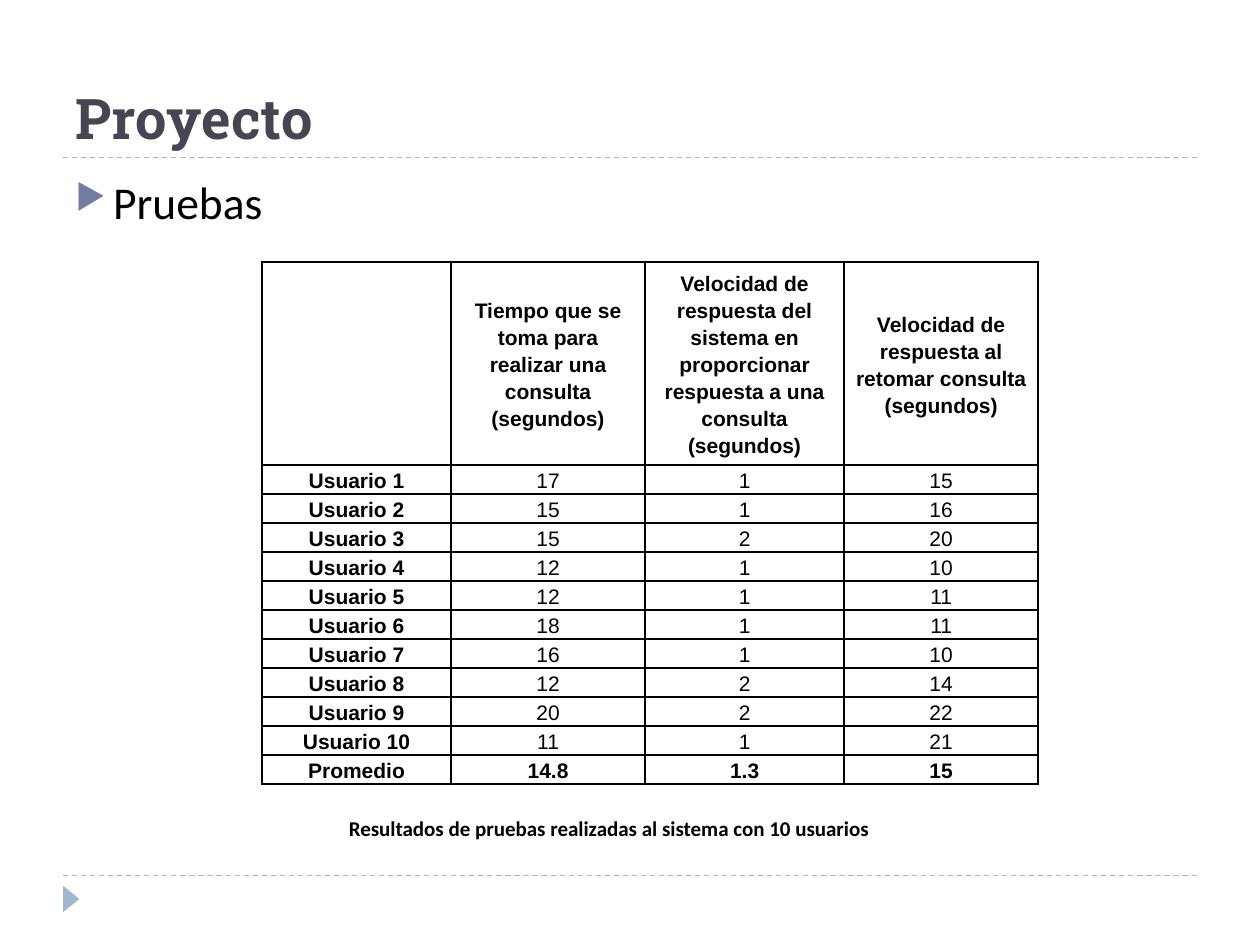
from lxml.etree import SubElement
from pptx import Presentation
from pptx.dml.color import RGBColor
from pptx.enum.dml import MSO_LINE
from pptx.enum.shapes import MSO_CONNECTOR, MSO_SHAPE
from pptx.enum.text import MSO_ANCHOR as ANCHOR, PP_ALIGN as ALIGN
from pptx.oxml.ns import qn
from pptx.util import Inches, Pt

COLORS = {"title": "464653", "text": "000000", "rule": "9FB8CD", "bullet": "727CA3"}
TITLE = "Proyecto"
TOPIC = "Pruebas"
CAPTION = "Resultados de pruebas realizadas al sistema con 10 usuarios"
HEADERS = [
    "",
    "Tiempo que se toma para realizar una consulta (segundos)",
    "Velocidad de respuesta del sistema en proporcionar respuesta a una consulta (segundos)",
    "Velocidad de respuesta al retomar consulta (segundos)",
]
TIMES = [
    (17, 1, 15), (15, 1, 16), (15, 2, 20), (12, 1, 10), (12, 1, 11),
    (18, 1, 11), (16, 1, 10), (12, 2, 14), (20, 2, 22), (11, 1, 21),
]
AVERAGES = ["Promedio", "14.8", "1.3", "15"]
ROWS = [
    HEADERS,
    *([f"Usuario {number}", *map(str, times)] for number, times in enumerate(TIMES, 1)),
    AVERAGES,
]

WIDTH, HEIGHT = 10, 7.5
MARGIN = WIDTH * 0.05
CONTENT_WIDTH = WIDTH - 2 * MARGIN
RULES = (1.25, 6.95)
COLUMN_WIDTHS = (1.5, 1.54, 1.58, 1.54)
HEADER_HEIGHT, ROW_HEIGHT = 1.35, 0.19


def color(name):
    return RGBColor.from_string(COLORS[name])


def box(*lengths):
    return [Inches(length) for length in lengths]


def format_text(paragraph, font_name, size, bold=False, color_name="text"):
    for run in paragraph.runs:
        font = run.font
        font.name, font.size, font.bold = font_name, Pt(size), bold
        font.color.rgb = color(color_name)


def add_text(slide, text, place, size, bold=False):
    frame = slide.shapes.add_textbox(*box(*place)).text_frame
    frame.word_wrap = True
    frame.text = text
    paragraph = frame.paragraphs[0]
    format_text(paragraph, "Calibri", size, bold)
    return paragraph


def add_bullet(paragraph, indent):
    paragraph.space_before = Pt(6)
    properties = paragraph._p.get_or_add_pPr()
    properties.set("marL", str(Inches(indent)))
    properties.set("indent", str(-Inches(indent)))
    bullet_color = SubElement(properties, qn("a:buClr"))
    SubElement(bullet_color, qn("a:srgbClr"), val=COLORS["bullet"])
    SubElement(properties, qn("a:buSzPct"), val="76000")
    SubElement(properties, qn("a:buChar"), char="▶")


def add_rule(slide, y):
    ends = box(MARGIN, y, WIDTH - MARGIN, y)
    rule = slide.shapes.add_connector(MSO_CONNECTOR.STRAIGHT, *ends)
    rule.line.color.rgb = color("rule")
    rule.line.width = Pt(0.75)
    rule.line.dash_style = MSO_LINE.DASH
    SubElement(rule._element.spPr, qn("a:effectLst"))


def add_corner_triangle(slide):
    triangle = slide.shapes.add_shape(
        MSO_SHAPE.ISOSCELES_TRIANGLE, *box(0.46, 7.07, 0.21, 0.13))
    triangle.rotation = 90
    triangle.shadow.inherit = False
    triangle.fill.solid()
    triangle.fill.fore_color.rgb = color("rule")
    triangle.line.fill.background()


def add_borders(cell):
    properties = cell._tc.get_or_add_tcPr()
    for position, side in enumerate(("lnL", "lnR", "lnT", "lnB")):
        line = properties.makeelement(qn(f"a:{side}"), {"w": str(Pt(1))})
        fill = SubElement(line, qn("a:solidFill"))
        SubElement(fill, qn("a:srgbClr"), val=COLORS["text"])
        properties.insert(position, line)


def fill_cell(cell, text, bold):
    cell.fill.background()
    cell.margin_left = cell.margin_right = Inches(0.07)
    cell.margin_top = cell.margin_bottom = 0
    cell.vertical_anchor = ANCHOR.MIDDLE
    cell.text_frame.text = text
    paragraph = cell.text_frame.paragraphs[0]
    paragraph.alignment = ALIGN.CENTER
    paragraph.line_spacing = 1.15
    format_text(paragraph, "Arial", 12, bold)
    add_borders(cell)


def add_results_table(slide):
    row_heights = [HEADER_HEIGHT] + [ROW_HEIGHT] * (len(ROWS) - 1)
    place = box(2.08, 2.08, sum(COLUMN_WIDTHS), sum(row_heights))
    table = slide.shapes.add_table(len(ROWS), len(HEADERS), *place).table
    table.first_row = table.horz_banding = False
    for column, width in zip(table.columns, COLUMN_WIDTHS):
        column.width = Inches(width)
    for row_index, (row, height) in enumerate(zip(table.rows, row_heights)):
        row.height = Inches(height)
        edge_row = row_index in (0, len(ROWS) - 1)
        for column_index, text in enumerate(ROWS[row_index]):
            fill_cell(row.cells[column_index], text, edge_row or column_index == 0)


def add_title(slide):
    title = slide.shapes.title
    title.left, title.top, title.width, title.height = box(
        MARGIN, 0.17, CONTENT_WIDTH, 1.08)
    frame = title.text_frame
    frame.text = TITLE
    frame.vertical_anchor = ANCHOR.BOTTOM
    frame.paragraphs[0].alignment = ALIGN.LEFT
    format_text(frame.paragraphs[0], "Roboto Slab", 32, True, "title")


def main():
    presentation = Presentation()
    presentation.slide_width, presentation.slide_height = box(WIDTH, HEIGHT)
    slide = presentation.slides.add_slide(presentation.slide_layouts[5])
    for y in RULES:
        add_rule(slide, y)
    add_corner_triangle(slide)
    add_title(slide)
    topic = add_text(slide, TOPIC, (MARGIN, 1.33, CONTENT_WIDTH, 5.4), 26)
    add_bullet(topic, 0.3)
    add_results_table(slide)
    add_text(slide, CAPTION, (2.67, 6.42, 5, 0.3), 12, True)
    presentation.save("out.pptx")


if __name__ == "__main__":
    main()
